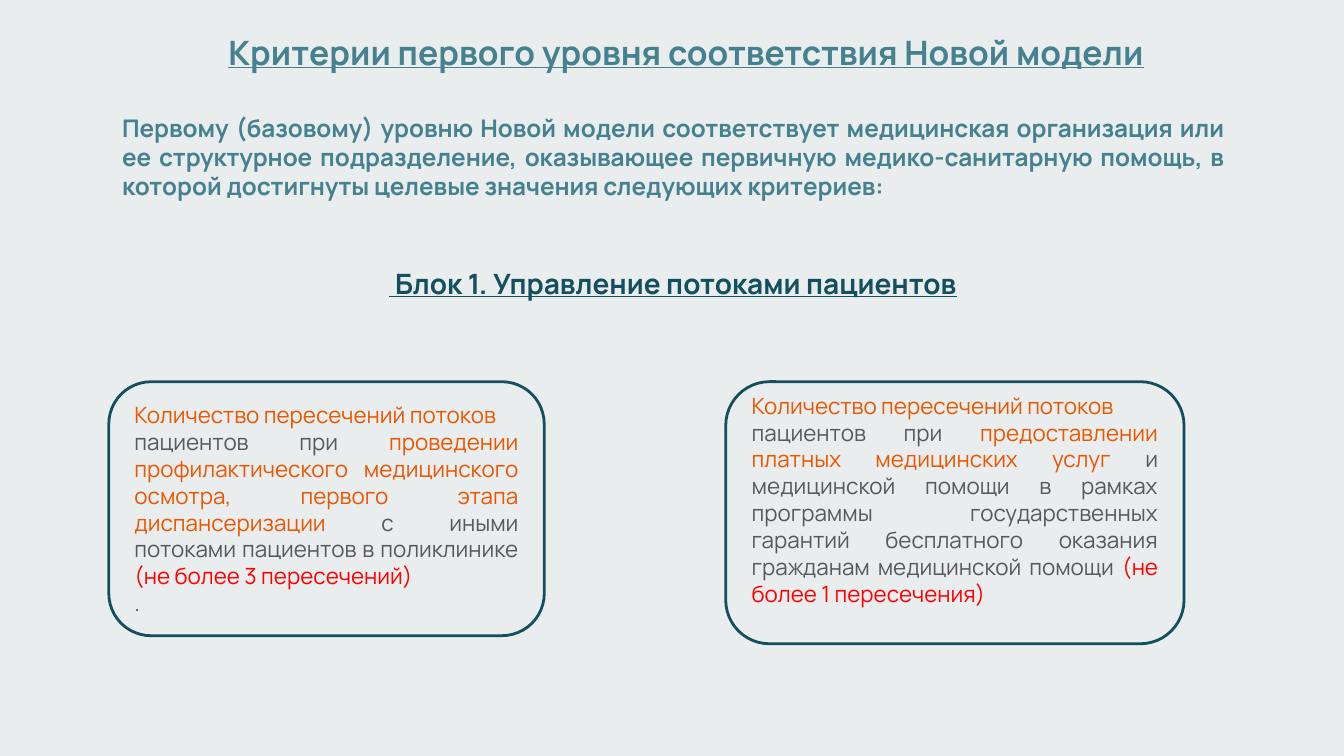
from pptx import Presentation
from pptx.dml.color import RGBColor
from pptx.enum.shapes import MSO_SHAPE
from pptx.enum.text import MSO_ANCHOR, MSO_AUTO_SIZE, PP_ALIGN
from pptx.util import Inches, Pt

FONT = "Manrope"
HUES = {"back": "E9EDEE", "teal": "45818E", "deep": "134F5C",
        "key": "EB5600", "gray": "595959", "red": "FF0000"}

TITLE = "Критерии первого уровня соответствия Новой модели"
INTRO = ("Первому (базовому) уровню Новой модели соответствует медицинская организация "
         "или ее структурное подразделение, оказывающее первичную медико-санитарную помощь, "
         "в которой достигнуты целевые значения следующих критериев:")
BLOCK = " Блок 1. Управление потоками пациентов"
LEAD = [("Количество пересечений потоков", "key")]
CARDS = [
    {"box": (5.4, 2.84, 3.41, 1.95), "foot": 0.3, "text": [
        LEAD,
        [("пациентов при ", "gray"),
         ("предоставлении платных медицинских услуг", "key"),
         (" и медицинской помощи в рамках программы государственных гарантий "
          "бесплатного оказания гражданам медицинской помощи ", "gray"),
         ("(не более 1 пересечения)", "red")]]},
    {"box": (0.81, 2.84, 3.24, 1.89), "foot": 0.1, "text": [
        LEAD,
        [("пациентов при ", "gray"),
         ("проведении профилактического медицинского осмотра, "
          "первого этапа диспансеризации", "key"),
         (" с иными потоками пациентов в поликлинике ", "gray"),
         ("(не более 3 пересечений)", "red")],
        [(".", "gray")]]},
]


def color(name):
    """Return the named colour."""
    return RGBColor.from_string(HUES[name])


def write(shape, text, size=12, bold=False, line=False, align=PP_ALIGN.LEFT,
          anchor=MSO_ANCHOR.TOP, foot=0.1):
    """Fill a shape with paragraphs of (words, colour) runs."""
    frame = shape.text_frame
    frame.word_wrap = True
    frame.auto_size = MSO_AUTO_SIZE.NONE
    frame.vertical_anchor = anchor
    frame.margin_left = frame.margin_right = frame.margin_top = Inches(0.1)
    frame.margin_bottom = Inches(foot)
    for i, runs in enumerate(text):
        para = frame.add_paragraph() if i else frame.paragraphs[0]
        para.alignment = align
        for words, hue in runs:
            run = para.add_run()
            run.text = words
            font = run.font
            font.name, font.size = FONT, Pt(size)
            font.bold, font.underline = bold, line
            font.color.rgb = color(hue)


def main():
    """Build the slide and save it."""
    deck = Presentation()
    deck.slide_width = Inches(10)
    deck.slide_height = deck.slide_width * 9 // 16
    slide = deck.slides.add_slide(deck.slide_layouts[5])
    slide.background.fill.solid()
    slide.background.fill.fore_color.rgb = color("back")
    shapes = slide.shapes

    title = shapes.title
    title.left, title.top, title.width, title.height = map(Inches, (1.6, 0.14, 7.1, 0.46))
    write(title, [[(TITLE, "teal")]], size=18, bold=True, line=True)

    intro = shapes.add_textbox(*map(Inches, (0.81, 0.74, 8.39, 0.81)))
    write(intro, [[(INTRO, "teal")]], size=13, bold=True, align=PP_ALIGN.JUSTIFY)

    for item in CARDS:
        card = shapes.add_shape(MSO_SHAPE.ROUNDED_RECTANGLE, *map(Inches, item["box"]))
        card.shadow.inherit = False
        card.fill.solid()
        card.fill.fore_color.rgb = color("back")
        card.line.color.rgb = color("deep")
        card.line.width = Pt(1.5)
        write(card, item["text"], align=PP_ALIGN.JUSTIFY,
              anchor=MSO_ANCHOR.MIDDLE, foot=item["foot"])

    block = shapes.add_textbox(*map(Inches, (2.8, 1.88, 4.64, 0.5)))
    write(block, [[(BLOCK, "deep")]], size=15, bold=True, line=True)

    deck.save("out.pptx")


if __name__ == "__main__":
    main()
